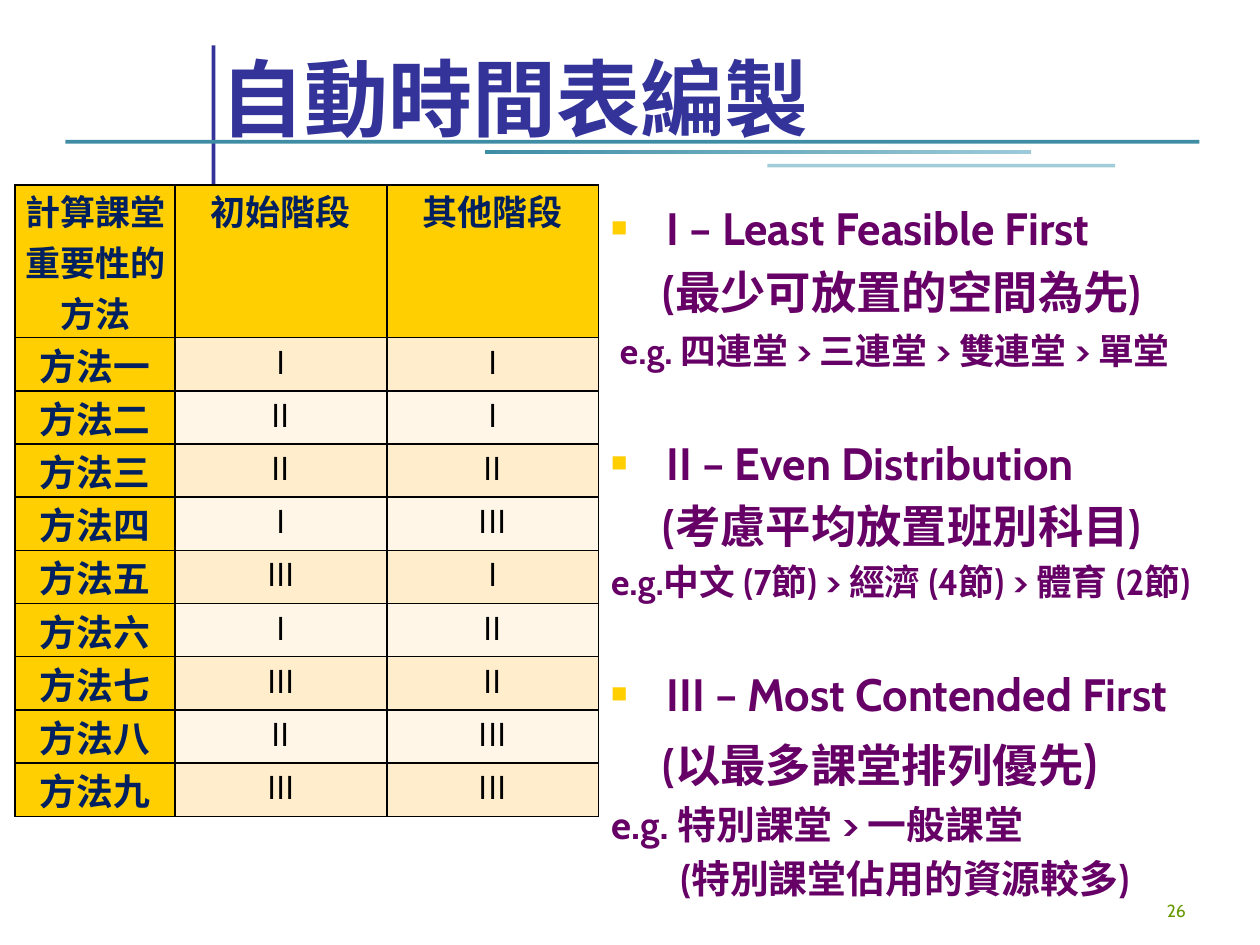
"""Build the slide on automatic timetable compilation."""
from typing import NamedTuple

from lxml.etree import SubElement
from pptx import Presentation
from pptx.dml.color import RGBColor
from pptx.enum.shapes import MSO_SHAPE
from pptx.enum.text import MSO_ANCHOR, MSO_AUTO_SIZE, PP_ALIGN
from pptx.oxml.ns import qn
from pptx.util import Inches, Pt

COLORS = {
    "navy": "333399", "teal": "3F8DA5", "sky": "9BCAD9", "pale": "A1CDDB",
    "gold": "FFCF01", "label": "002060", "black": "000000", "odd": "FFEDCC",
    "even": "FFF6E7", "purple": "660066", "green": "669900",
}
LATIN, CJK = "Cabin", "Noto Sans CJK SC"
HANGING = 0.44


class Bar(NamedTuple):
    left: float
    top: float
    width: float
    height: float
    color: str
    end_color: str = ""


class Line(NamedTuple):
    text: str
    size: float
    before: float
    margin: float = HANGING
    indent: float = 0
    bullet: bool = False
    closing: str = ""


BARS = [
    Bar(1.68, 0.36, 0.03, 1.15, "navy"),
    Bar(0.52, 1.11, 9, 0.03, "teal"),
    Bar(3.85, 1.19, 4.33, 0.03, "teal", "sky"),
    Bar(6.09, 1.3, 2.76, 0.03, "pale"),
]
HEADERS = ["計算課堂重要性的方法", "初始階段", "其他階段"]
METHODS = [
    ("一", "I", "I"), ("二", "II", "I"), ("三", "II", "II"),
    ("四", "I", "III"), ("五", "III", "I"), ("六", "I", "II"),
    ("七", "III", "II"), ("八", "II", "III"), ("九", "III", "III"),
]
LINES = [
    Line("I – Least Feasible First", 25.9, 0, indent=-HANGING, bullet=True),
    Line("(最少可放置的空間為先)", 25.9, 5.2, margin=0.41),
    Line("e.g. 四連堂 > 三連堂 > 雙連堂 > 單堂", 20.4, 5.8, margin=0.07),
    Line("II – Even Distribution", 25.9, 36.3, indent=-HANGING, bullet=True),
    Line("(考慮平均放置班別科目)", 25.9, 5.2, margin=0.41),
    Line("e.g.中文 (7節) > 經濟 (4節) > 體育 (2節)", 20.4, 4.1, indent=-HANGING),
    Line("III – Most Contended First", 25.9, 36.3, indent=-HANGING, bullet=True),
    Line("(以最多課堂排列優先", 25.9, 5.6, margin=0.41, closing=")"),
    Line("e.g. 特別課堂 > 一般課堂", 22.2, 4.4, indent=-HANGING),
    Line("(特別課堂佔用的資源較多)", 22.2, 4.4, margin=0.55),
]


def rgb(name: str) -> RGBColor:
    return RGBColor.from_string(COLORS[name])


def add_run(paragraph, text: str, size: float, color: str,
            bold: bool = True, font_name: str = LATIN) -> None:
    run = paragraph.add_run()
    run.text = text
    formats = {"size": Pt(size), "bold": bold, "name": font_name}
    for attribute, value in formats.items():
        setattr(run.font, attribute, value)
    run.font.color.rgb = rgb(color)
    SubElement(run.font._element, qn("a:ea"), typeface=CJK)


def place(shape, left: float, top: float, width: float, height: float) -> None:
    box = {"left": left, "top": top, "width": width, "height": height}
    for attribute, value in box.items():
        setattr(shape, attribute, Inches(value))


def format_frame(shape, anchor: MSO_ANCHOR, **margins: float) -> None:
    frame = shape.text_frame
    formats = {"word_wrap": True, "auto_size": MSO_AUTO_SIZE.NONE,
               "vertical_anchor": anchor}
    formats |= {f"margin_{side}": Inches(value) for side, value in margins.items()}
    for attribute, value in formats.items():
        setattr(frame, attribute, value)


def add_bar(slide, bar: Bar) -> None:
    shape = slide.shapes.add_shape(MSO_SHAPE.RECTANGLE, *map(Inches, bar[:4]))
    shape.shadow.inherit = False
    shape.line.fill.background()
    if bar.end_color:
        shape.fill.gradient()
        shape.fill.gradient_angle = 0
        for stop, color in zip(shape.fill.gradient_stops, (bar.color, bar.end_color)):
            stop.color.rgb = rgb(color)
    else:
        shape.fill.solid()
        shape.fill.fore_color.rgb = rgb(bar.color)


def fill_cell(cell, text: str, size: float, color: str, bold: bool, fill: str) -> None:
    for side in ("L", "R", "T", "B"):
        border = SubElement(cell._tc.get_or_add_tcPr(), qn(f"a:ln{side}"), w=str(Pt(1)))
        solid = SubElement(border, qn("a:solidFill"))
        SubElement(solid, qn("a:srgbClr"), val=COLORS["black"])
    cell.fill.solid()
    cell.fill.fore_color.rgb = rgb(fill)
    margins = {"left": 0.06, "right": 0.06, "top": 0, "bottom": 0}
    for side, value in margins.items():
        setattr(cell, f"margin_{side}", Inches(value))
    paragraph = cell.text_frame.paragraphs[0]
    paragraph.alignment = PP_ALIGN.CENTER
    add_run(paragraph, text, size, color, bold, CJK)


def add_method_table(slide) -> None:
    table = slide.shapes.add_table(
        len(METHODS) + 1, len(HEADERS),
        Inches(0.12), Inches(1.47), Inches(4.63), Inches(4.71)).table
    for column, width in zip(table.columns, (1.27, 1.68, 1.68)):
        column.width = Inches(width)
    for index, row in enumerate(table.rows):
        row.height = Inches(0.4 if index else 1.11)
    for column, header in enumerate(HEADERS):
        fill_cell(table.cell(0, column), header, 20, "label", True, "gold")
    for row, (number, *stages) in enumerate(METHODS, start=1):
        fill_cell(table.cell(row, 0), f"方法{number}", 21, "label", True, "gold")
        for column, stage in enumerate(stages, start=1):
            fill_cell(table.cell(row, column), stage, 18, "black", False,
                      "odd" if row % 2 else "even")


def write_line(paragraph, line: Line) -> None:
    properties = paragraph._p.get_or_add_pPr()
    properties.set("marL", str(Inches(line.margin)))
    properties.set("indent", str(Inches(line.indent)))
    if line.bullet:
        color = SubElement(properties, qn("a:buClr"))
        SubElement(color, qn("a:srgbClr"), val=COLORS["gold"])
        SubElement(properties, qn("a:buSzPct"), val="60000")
        SubElement(properties, qn("a:buChar"), char="■")
    else:
        SubElement(properties, qn("a:buNone"))
    paragraph.space_before = Pt(line.before)
    add_run(paragraph, line.text, line.size, "purple")
    if line.closing:
        add_run(paragraph, line.closing, 29.6, "purple")


def main() -> None:
    presentation = Presentation()
    presentation.slide_width, presentation.slide_height = Inches(10), Inches(7.5)
    slide = presentation.slides.add_slide(presentation.slide_layouts[1])
    for bar in BARS:
        add_bar(slide, bar)

    title = slide.shapes.title
    place(title, 1.75, 0, 7.75, 1.17)
    format_frame(title, MSO_ANCHOR.BOTTOM, left=0, top=0.05, right=0, bottom=0)
    heading = title.text_frame.paragraphs[0]
    heading.alignment = PP_ALIGN.LEFT
    add_run(heading, "自動時間表編製", 48, "navy")

    add_method_table(slide)

    body = slide.placeholders[1]
    place(body, 4.75, 1.47, 5.25, 5.89)
    format_frame(body, MSO_ANCHOR.TOP, left=0.1, top=0.12, right=0.1, bottom=0.05)
    for index, line in enumerate(LINES):
        frame = body.text_frame
        write_line(frame.add_paragraph() if index else frame.paragraphs[0], line)

    page = slide.shapes.add_textbox(
        Inches(7.43), Inches(6.86), Inches(2.08), Inches(0.5))
    format_frame(page, MSO_ANCHOR.BOTTOM)
    number = page.text_frame.paragraphs[0]
    number.alignment = PP_ALIGN.RIGHT
    add_run(number, "26", 10, "green", False)

    presentation.save("out.pptx")


if __name__ == "__main__":
    main()
